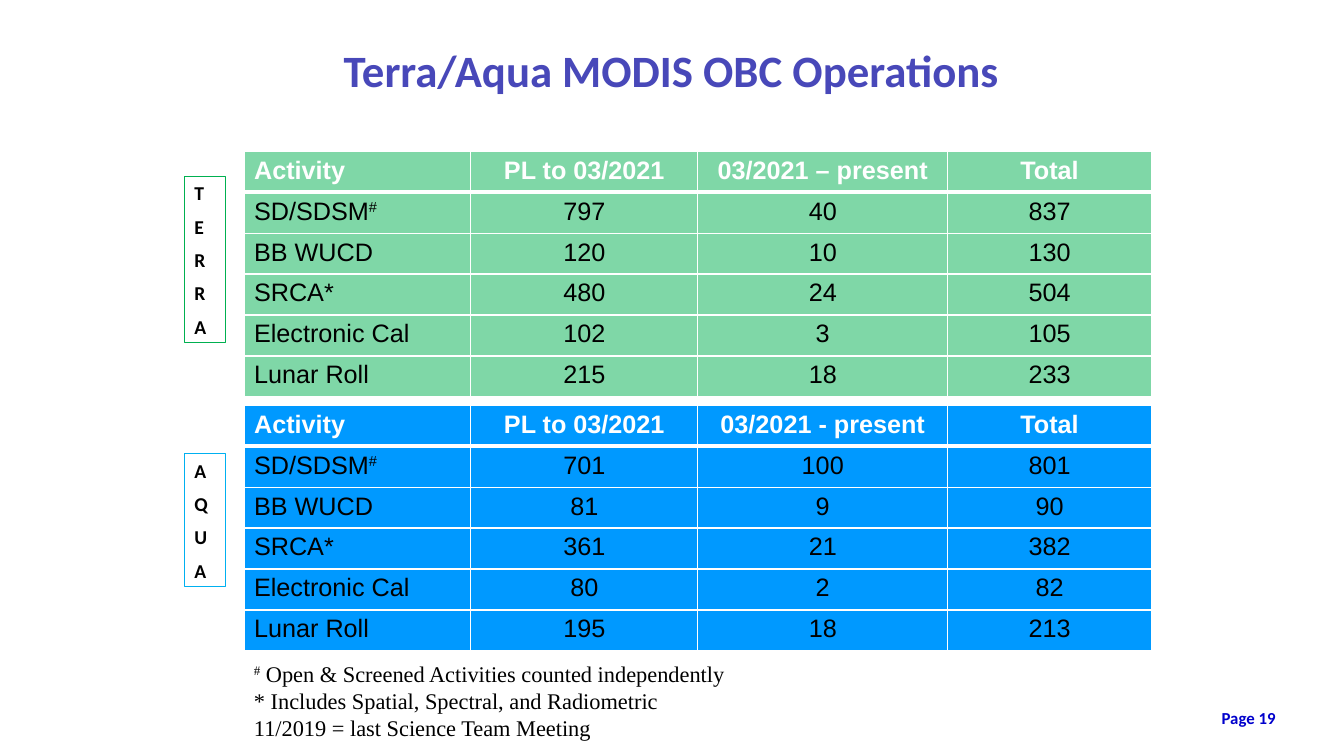
from dataclasses import dataclass

from lxml import etree
from pptx import Presentation
from pptx import util as u
from pptx.dml.color import RGBColor
from pptx.enum import shapes, text
from pptx.oxml import ns

PX = 9144  # 100 px to the inch

WHITE = RGBColor(0xFF, 0xFF, 0xFF)
BLACK = RGBColor(0x00, 0x00, 0x00)
TITLE_BLUE = RGBColor(0x48, 0x48, 0xB9)
PAGE_BLUE = RGBColor(0x00, 0x00, 0xCC)
TERRA_GREEN = RGBColor(0x00, 0xB0, 0x50)
AQUA_BLUE = RGBColor(0x00, 0x99, 0xFF)
AQUA_OUTLINE = RGBColor(0x00, 0xB0, 0xF0)

LEFT, CENTER, RIGHT = text.PP_ALIGN.LEFT, text.PP_ALIGN.CENTER, text.PP_ALIGN.RIGHT
ACTIVITIES = ["SD/SDSM#", "BB WUCD", "SRCA*", "Electronic Cal", "Lunar Roll"]
TABLE_LEFT = 242
COLUMN_WIDTHS = [225, 225, 248, 202]
ROW_HEIGHT = 41
TABLE_HEIGHT = ROW_HEIGHT * (len(ACTIVITIES) + 1) - 2


@dataclass(frozen=True)
class Style:
    font: str
    size: int
    color: RGBColor
    bold: bool = False
    align: text.PP_ALIGN = LEFT


@dataclass(frozen=True)
class Box:
    left: int
    top: int
    width: int
    height: int

    def emu(self) -> list[u.Emu]:
        return [u.Emu(side * PX) for side in (self.left, self.top, self.width, self.height)]


@dataclass(frozen=True)
class Satellite:
    name: str
    label: Box
    outline: RGBColor
    table_top: int
    fill: RGBColor
    opacity: int
    recent_period: str
    counts: list[tuple[int, int, int]]


SATELLITES = [
    Satellite("TERRA", Box(183, 175, 41, 165), TERRA_GREEN, 150, TERRA_GREEN, 50,
              "03/2021 – present",
              [(797, 40, 837), (120, 10, 130), (480, 24, 504), (102, 3, 105), (215, 18, 233)]),
    Satellite("AQUA", Box(183, 450, 41, 132), AQUA_OUTLINE, 402, AQUA_BLUE, 100,
              "03/2021 - present",
              [(701, 100, 801), (81, 9, 90), (361, 21, 382), (80, 2, 82), (195, 18, 213)]),
]


def add_run(paragraph, content: str, style: Style, raised: bool = False) -> None:
    run = paragraph.add_run()
    run.text = content
    run.font.name, run.font.size = style.font, u.Pt(style.size)
    run.font.bold = style.bold
    run.font.color.rgb = style.color
    if raised:
        run.font._element.set("baseline", "30000")


def write(frame, lines: list[str], style: Style, gap: int = 0) -> None:
    """Write one paragraph per line; each # becomes a superscript run."""
    for index, line in enumerate(lines):
        paragraph = frame.add_paragraph() if index else frame.paragraphs[0]
        paragraph.alignment = style.align
        if index and gap:
            paragraph.space_before = u.Pt(gap)
        before, mark, after = line.partition("#")
        for part in (before, mark, after):
            if part:
                add_run(paragraph, part, style, raised=part == "#")


def add_text(slide, box: Box, lines: list[str], style: Style,
             anchor: text.MSO_ANCHOR = text.MSO_ANCHOR.TOP) -> None:
    frame = slide.shapes.add_textbox(*box.emu()).text_frame
    frame.word_wrap = True
    frame.vertical_anchor = anchor
    write(frame, lines, style)


def add_label(slide, satellite: Satellite) -> None:
    shape = slide.shapes.add_shape(shapes.MSO_SHAPE.RECTANGLE, *satellite.label.emu())
    shape.shadow.inherit = False
    shape.fill.background()
    shape.line.color.rgb = satellite.outline
    shape.line.width = u.Pt(0.75)
    frame = shape.text_frame
    frame.word_wrap = True
    frame.vertical_anchor = text.MSO_ANCHOR.TOP
    write(frame, list(satellite.name), Style("Calibri", 14, BLACK, True), gap=7)


def paint_cell(cell, satellite: Satellite, row: int) -> None:
    cell.fill.solid()
    cell.fill.fore_color.rgb = satellite.fill
    properties = cell._tc.get_or_add_tcPr()
    if satellite.opacity < 100:
        color = properties.find(".//" + ns.qn("a:srgbClr"))
        etree.SubElement(color, ns.qn("a:alpha"), val=str(satellite.opacity * 1000))
    # Thick rule between the header and the first data row
    widths = {"L": 1, "R": 1, "T": 3 if row == 1 else 1, "B": 3 if row == 0 else 1}
    for position, (side, width) in enumerate(widths.items()):
        border = etree.Element(ns.qn(f"a:ln{side}"), w=str(u.Pt(width)))
        fill = etree.SubElement(border, ns.qn("a:solidFill"))
        etree.SubElement(fill, ns.qn("a:srgbClr"), val=str(WHITE))
        properties.insert(position, border)


def add_counts_table(slide, satellite: Satellite) -> None:
    rows = [["Activity", "PL to 03/2021", satellite.recent_period, "Total"]]
    rows += [[name, *map(str, counts)] for name, counts in zip(ACTIVITIES, satellite.counts)]
    box = Box(TABLE_LEFT, satellite.table_top, sum(COLUMN_WIDTHS), TABLE_HEIGHT)
    table = slide.shapes.add_table(len(rows), len(COLUMN_WIDTHS), *box.emu()).table
    table.first_row = table.horz_banding = False
    for column, width in zip(table.columns, COLUMN_WIDTHS):
        column.width = u.Emu(width * PX)
    for row, values in enumerate(rows):
        for column, value in enumerate(values):
            cell = table.cell(row, column)
            paint_cell(cell, satellite, row)
            style = Style("Arial", 18, BLACK if row else WHITE, row == 0,
                          CENTER if column else LEFT)
            write(cell.text_frame, [value], style)


def main() -> None:
    presentation = Presentation()
    presentation.slide_width, presentation.slide_height = u.Emu(1333 * PX), u.Emu(750 * PX)
    slide = presentation.slides.add_slide(presentation.slide_layouts[6])

    # Title
    add_text(slide, Box(283, 30, 766, 78), ["Terra/Aqua MODIS OBC Operations"],
             Style("Calibri", 32, TITLE_BLUE, True, CENTER), text.MSO_ANCHOR.MIDDLE)

    # Footnotes
    add_text(slide, Box(TABLE_LEFT, 650, 508, 90),
             ["# Open & Screened Activities counted independently",
              "* Includes Spatial, Spectral, and Radiometric",
              "11/2019 = last Science Team Meeting"],
             Style("Times New Roman", 16, BLACK))

    # Satellite labels and tables
    for satellite in SATELLITES:
        add_label(slide, satellite)
        add_counts_table(slide, satellite)

    # Page number
    add_text(slide, Box(1042, 697, 233, 40), ["Page 19"],
             Style("Calibri", 12, PAGE_BLUE, True, RIGHT))

    presentation.save("out.pptx")


if __name__ == "__main__":
    main()
